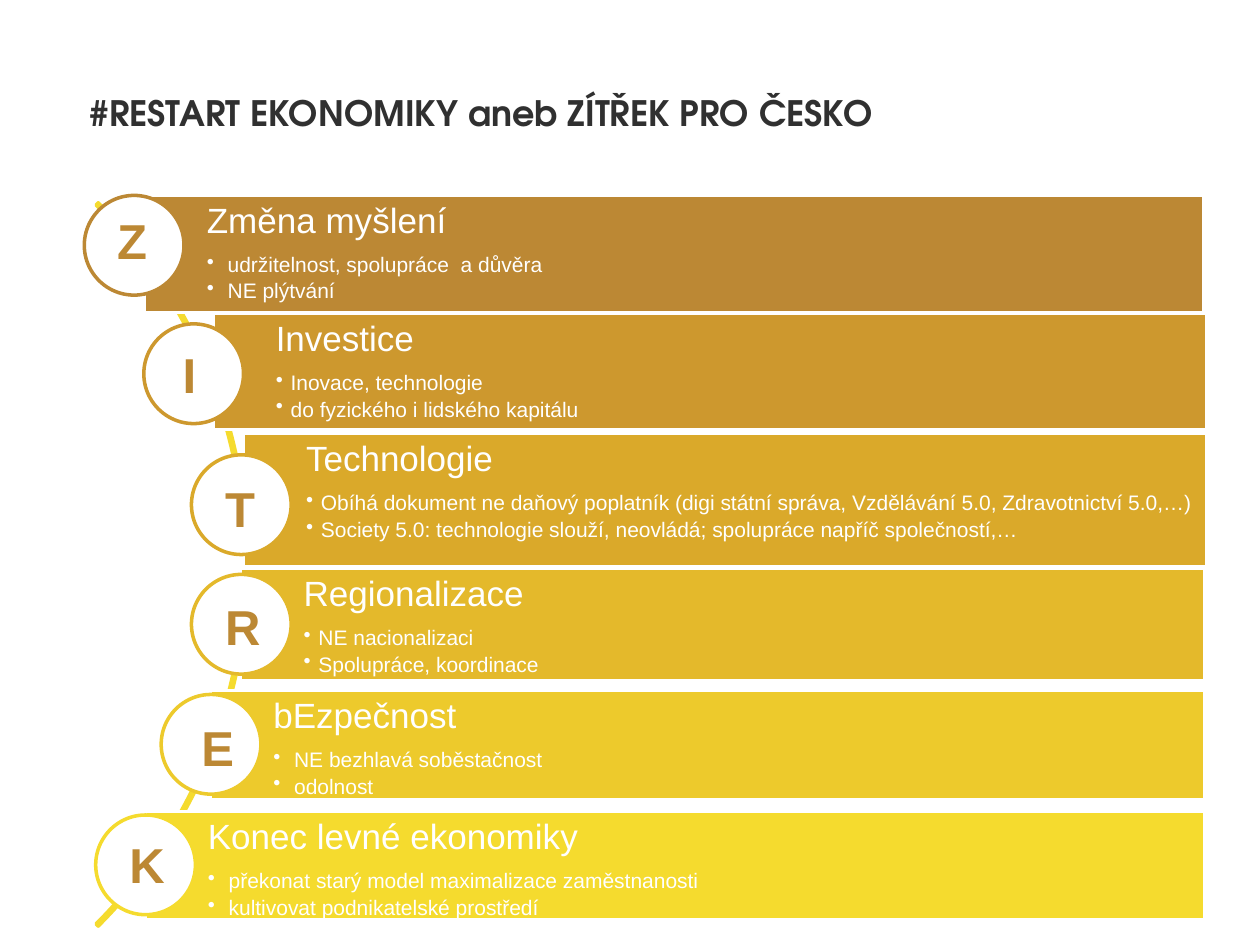
from dataclasses import dataclass

from lxml import etree
from pptx import Presentation
from pptx.dml.color import RGBColor
from pptx.enum.shapes import MSO_SHAPE
from pptx.enum.text import MSO_ANCHOR, MSO_AUTO_SIZE, PP_ALIGN
from pptx.oxml.ns import qn
from pptx.util import Cm, Pt

RECTANGLE, OVAL, BLOCK_ARC = MSO_SHAPE.RECTANGLE, MSO_SHAPE.OVAL, MSO_SHAPE.BLOCK_ARC
TOP, MIDDLE = MSO_ANCHOR.TOP, MSO_ANCHOR.MIDDLE
LEFT = PP_ALIGN.LEFT
FIT_SHAPE = MSO_AUTO_SIZE.SHAPE_TO_FIT_TEXT

WHITE = RGBColor(0xFF, 0xFF, 0xFF)
DARK = RGBColor(0x30, 0x30, 0x30)
BRONZE = RGBColor(0xBC, 0x88, 0x34)
OCHRE = RGBColor(0xCD, 0x98, 0x2E)
AMBER = RGBColor(0xDA, 0xA9, 0x2A)
GOLD = RGBColor(0xE4, 0xB9, 0x2B)
CORN = RGBColor(0xED, 0xCA, 0x2C)
YELLOW = RGBColor(0xF5, 0xDB, 0x2E)

TITLE_FONT = {"name": "TeX Gyre Adventor", "size": Pt(20), "bold": True}
HEADING_FONT = {"name": "Arial", "size": Pt(20)}
BULLET_FONT = {"name": "Arial", "size": Pt(12)}
LETTER_FONT = {"name": "Arial", "size": Pt(28), "bold": True}
BAR_FRAME = {
    "word_wrap": True, "vertical_anchor": TOP, "margin_left": Cm(1.27),
    "margin_top": Cm(0.15), "margin_right": Cm(0.15), "margin_bottom": Cm(0.15),
}
CIRCLE_SIZE = 2.01
HANGING = 0.3
NARROW, WIDE = 0.3, 0.42


@dataclass
class Band:
    """One step; all lengths in centimetres."""
    letter: str
    heading: str
    bullets: tuple[str, str]
    color: RGBColor
    bar: tuple[float, float, float, float]
    circle: tuple[float, float]
    letter_at: tuple[float, float]
    text_indent: float


BANDS = [
    Band("Z", "Změna myšlení", ("udržitelnost, spolupráce  a důvěra", "NE plýtvání"),
         BRONZE, (2.9, 3.94, 21.36, 2.36), (1.7, 3.94), (2.11, 4.11), WIDE),
    Band("I", "Investice", ("Inovace, technologie", "do fyzického i lidského kapitálu"),
         OCHRE, (4.29, 6.32, 20.04, 2.34), (2.9, 6.53), (3.43, 6.83), NARROW),
    Band("T", "Technologie",
         ("Obíhá dokument ne daňový poplatník (digi státní správa, "
          "Vzdělávání 5.0, Zdravotnictví 5.0,…)",
          "Society 5.0: technologie slouží, neovládá; spolupráce napříč společností,…"),
         AMBER, (4.9, 8.74, 19.43, 2.69), (3.86, 9.17), (4.29, 9.53), NARROW),
    Band("R", "Regionalizace", ("NE nacionalizaci", "Spolupráce, koordinace"),
         GOLD, (4.85, 11.46, 19.43, 2.26), (3.86, 11.58), (4.29, 11.91), NARROW),
    Band("E", "bEzpečnost", ("NE bezhlavá soběstačnost", "odolnost"),
         CORN, (4.24, 13.92, 20.04, 2.21), (3.25, 14.0), (3.81, 14.33), WIDE),
    Band("K", "Konec levné ekonomiky",
         ("překonat starý model maximalizace zaměstnanosti",
          "kultivovat podnikatelské prostředí"),
         YELLOW, (2.92, 16.36, 21.36, 2.18), (1.93, 16.43), (2.36, 16.69), WIDE),
]


def set_values(target, values: dict) -> None:
    for name, value in values.items():
        setattr(target, name, value)


def write(paragraph, text: str, font: dict, color: RGBColor) -> None:
    paragraph.alignment = LEFT
    run = paragraph.add_run()
    run.text = text
    set_values(run.font, font)
    run.font.color.rgb = color


def add_outlined(slide, kind, box, fill: RGBColor | None, line: RGBColor):
    shape = slide.shapes.add_shape(kind, *map(Cm, box))
    shape.shadow.inherit = False
    if fill is None:
        shape.fill.background()
    else:
        shape.fill.solid()
        shape.fill.fore_color.rgb = fill
    shape.line.color.rgb = line
    shape.line.width = Pt(2)
    return shape


def add_bullet(paragraph, text_indent: float) -> None:
    properties = paragraph._p.get_or_add_pPr()
    properties.set("marL", str(Cm(text_indent)))
    properties.set("indent", str(-Cm(text_indent)))
    etree.SubElement(properties, qn("a:buChar")).set("char", "•")


def add_band(slide, band: Band) -> None:
    bar = add_outlined(slide, RECTANGLE, band.bar, band.color, WHITE)
    frame = bar.text_frame
    set_values(frame, BAR_FRAME)
    heading = frame.paragraphs[0]
    set_values(heading, {"line_spacing": 0.9, "space_after": Pt(8)})
    write(heading, band.heading, HEADING_FONT, WHITE)
    for text in band.bullets:
        paragraph = frame.add_paragraph()
        paragraph.level = 1
        add_bullet(paragraph, band.text_indent)
        set_values(paragraph, {"line_spacing": 0.9, "space_after": Pt(2)})
        write(paragraph, text, BULLET_FONT, WHITE)
    add_outlined(slide, OVAL, (*band.circle, CIRCLE_SIZE, CIRCLE_SIZE), WHITE, band.color)


def add_letter(slide, band: Band) -> None:
    box = slide.shapes.add_textbox(*map(Cm, (*band.letter_at, 0.99, 1.45)))
    set_values(box.text_frame, {"word_wrap": True, "auto_size": FIT_SHAPE})
    write(box.text_frame.paragraphs[0], band.letter, LETTER_FONT, BRONZE)


def add_title(slide) -> None:
    title = slide.shapes.title
    set_values(title, {"left": Cm(1.55), "top": Cm(1.47),
                       "width": Cm(21.21), "height": Cm(1.6)})
    set_values(title.text_frame, {"word_wrap": True, "vertical_anchor": MIDDLE})
    write(title.text_frame.paragraphs[0], "#RESTART EKONOMIKY aneb ZÍTŘEK PRO ČESKO",
          TITLE_FONT, DARK)


def main() -> None:
    presentation = Presentation()
    presentation.slide_width, presentation.slide_height = Cm(25.4), Cm(19.05)
    slide = presentation.slides.add_slide(presentation.slide_layouts[5])
    add_title(slide)
    arc = add_outlined(slide, BLOCK_ARC, (-15.62, 1.07, 20.62, 20.62), None, YELLOW)
    # Angles are in 60000ths of a degree, scaled by 100000: 315° to 45°.
    for index, value in enumerate((189, 27, 0.003)):
        arc.adjustments[index] = value
    for band in BANDS:
        add_band(slide, band)
    for band in BANDS:
        add_letter(slide, band)
    presentation.save("out.pptx")


if __name__ == "__main__":
    main()
